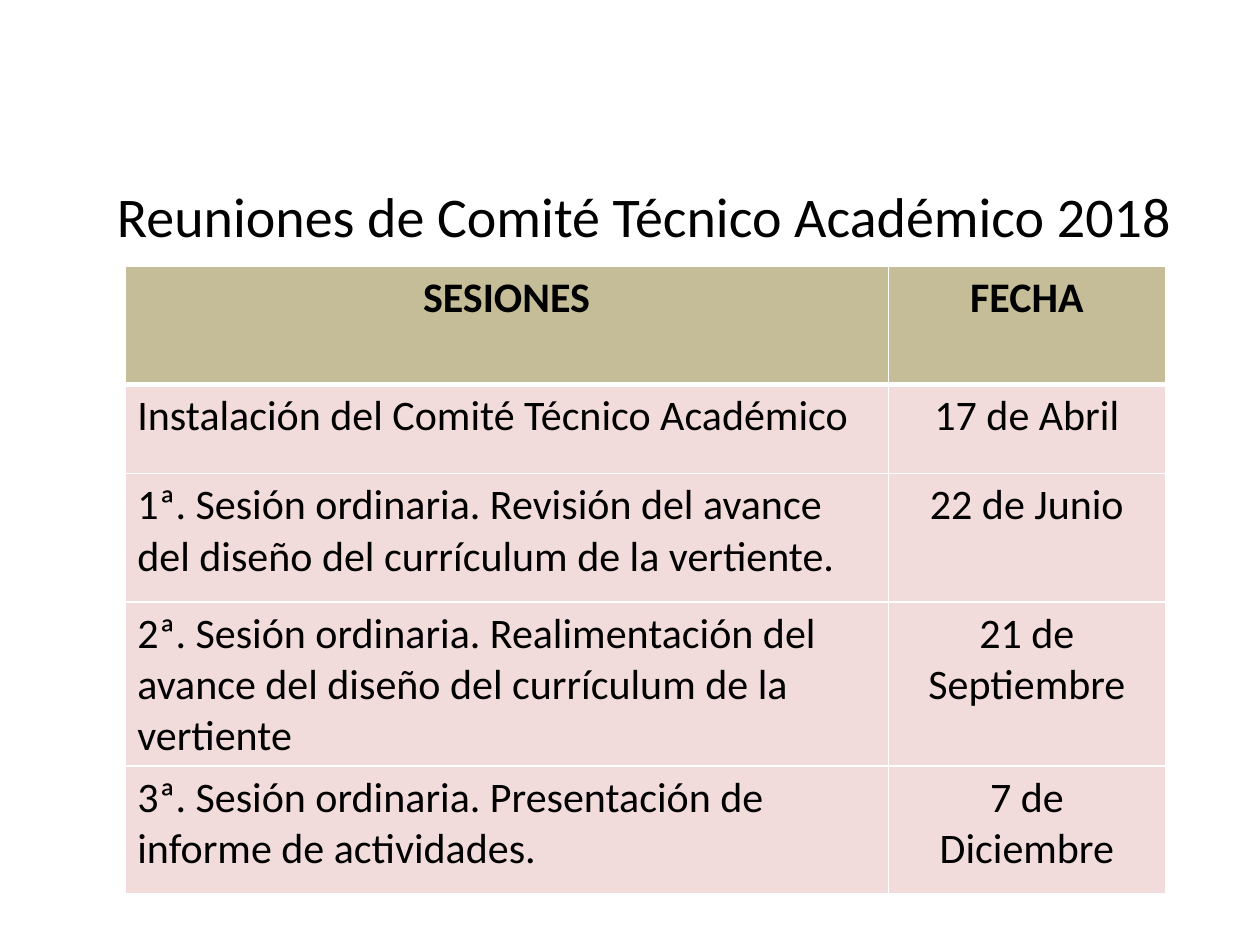
from lxml.etree import SubElement
from pptx import Presentation
from pptx.dml.color import RGBColor
from pptx.enum.text import PP_ALIGN
from pptx.oxml.ns import qn
from pptx.util import Inches, Pt

HEADER = ("SESIONES", "FECHA")
SESSIONS = [
    ("Instalación del Comité Técnico Académico", "17 de Abril"),
    ("1ª. Sesión ordinaria. Revisión del avance del diseño del currículum "
     "de la vertiente.", "22 de Junio"),
    ("2ª. Sesión ordinaria. Realimentación del avance del diseño del currículum "
     "de la vertiente", "21 de Septiembre"),
    ("3ª. Sesión ordinaria. Presentación de informe de actividades.",
     "7 de Diciembre"),
]
COLUMN_WIDTHS = (6.06, 2.2)
ROW_HEIGHTS = (0.94, 0.71, 1.02, 1.01, 1.01)


def color(value):
    return RGBColor.from_string(value)


def write(frame, text, size=24, bold=False, align=PP_ALIGN.LEFT):
    frame.word_wrap = True
    para = frame.paragraphs[0]
    para.alignment = align
    span = para.add_run()
    span.text = text
    span.font.name = "Calibri"
    span.font.size = Pt(size)
    span.font.bold = bold
    span.font.color.rgb = color("000000")


def add_borders(cell, top=1, bottom=1):
    """Draw white cell borders; call before the cell gets its fill."""
    properties = cell._tc.get_or_add_tcPr()
    for side, width in (("L", 1), ("R", 1), ("T", top), ("B", bottom)):
        line = SubElement(properties, qn(f"a:ln{side}"), w=str(Pt(width)))
        fill = SubElement(line, qn("a:solidFill"))
        SubElement(fill, qn("a:srgbClr"), val="FFFFFF")


def add_title(page, left, top, width, height):
    box = page.shapes.add_textbox(left, top, width, height)
    box.fill.solid()
    box.fill.fore_color.rgb = color("FFFFFF")
    write(box.text_frame, "Reuniones de Comité Técnico Académico 2018", size=32)


def add_sessions_table(page, left, top, width, height):
    rows = [HEADER, *SESSIONS]
    table = page.shapes.add_table(len(rows), len(HEADER), left, top, width, height).table
    for column, column_width in zip(table.columns, COLUMN_WIDTHS):
        column.width = Inches(column_width)
    for row, row_height in zip(table.rows, ROW_HEIGHTS):
        row.height = Inches(row_height)
    for i, texts in enumerate(rows):
        is_header = i == 0
        for j, text in enumerate(texts):
            cell = table.cell(i, j)
            add_borders(cell, top=3 if i == 1 else 1, bottom=3 if is_header else 1)
            cell.fill.solid()
            cell.fill.fore_color.rgb = color("C4BD97" if is_header else "F2DCDB")
            centered = is_header or j == 1
            write(cell.text_frame, text, bold=is_header,
                  align=PP_ALIGN.CENTER if centered else PP_ALIGN.LEFT)


def main():
    deck = Presentation()
    deck.slide_width, deck.slide_height = Inches(10), Inches(7.5)
    page = deck.slides.add_slide(deck.slide_layouts[6])
    add_title(page, Inches(0.83), Inches(1.39), Inches(8.58), Inches(0.66))
    add_sessions_table(page, Inches(0.99), Inches(2.11), Inches(8.26), Inches(4.69))
    deck.save("out.pptx")


if __name__ == "__main__":
    main()
